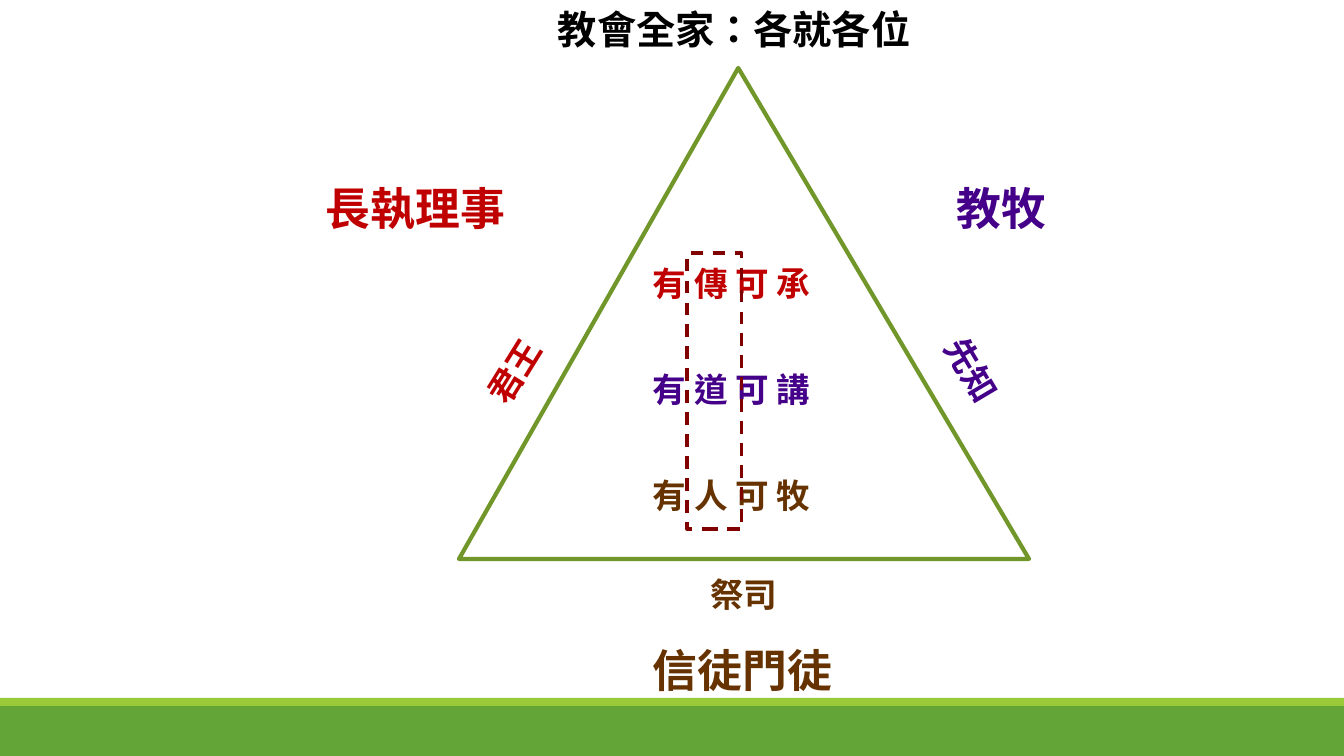
from pptx import Presentation
from pptx.dml.color import RGBColor
from pptx.enum.dml import MSO_LINE
from pptx.enum.lang import MSO_LANGUAGE_ID
from pptx.enum.shapes import MSO_SHAPE
from pptx.enum.text import PP_ALIGN
from pptx.util import Emu, Pt

RECTANGLE = MSO_SHAPE.RECTANGLE
TRIANGLE = MSO_SHAPE.ISOSCELES_TRIANGLE
DASH = MSO_LINE.DASH
LEFT, CENTER = PP_ALIGN.LEFT, PP_ALIGN.CENTER
CHINESE = MSO_LANGUAGE_ID.TRADITIONAL_CHINESE

EMU_PER_PX = 914400 / 100.8
WIDTH, HEIGHT = 1344, 756
BLACK, RED, PURPLE, BROWN = "000000", "C00000", "45008A", "663300"


def px(length):
    return Emu(round(length * EMU_PER_PX))


def color(hex_value):
    return RGBColor.from_string(hex_value)


def add_bar(slide, top, height, fill):
    shape = slide.shapes.add_shape(RECTANGLE, 0, px(top), px(WIDTH), px(height))
    shape.shadow.inherit = False
    shape.fill.solid()
    shape.fill.fore_color.rgb = color(fill)
    shape.line.fill.background()


def add_outline(slide, kind, box, line_color, line_width):
    shape = slide.shapes.add_shape(kind, *map(px, box))
    shape.shadow.inherit = False
    shape.fill.background()
    shape.line.color.rgb = color(line_color)
    shape.line.width = Pt(line_width)
    return shape


def add_label(slide, text, box, size, text_color, align=LEFT, rotation=0):
    shape = slide.shapes.add_textbox(*map(px, box))
    shape.rotation = rotation
    shape.text_frame.word_wrap = True
    paragraph = shape.text_frame.paragraphs[0]
    paragraph.alignment = align
    run = paragraph.add_run()
    run.text = text
    formats = {"name": "Arial", "size": Pt(size), "bold": True, "language_id": CHINESE}
    for name, value in formats.items():
        setattr(run.font, name, value)
    run.font.color.rgb = color(text_color)


def main():
    presentation = Presentation()
    presentation.slide_width, presentation.slide_height = px(WIDTH), px(HEIGHT)
    slide = presentation.slides.add_slide(presentation.slide_layouts[6])

    # Footer bars
    add_bar(slide, 706, 50, "63A537")
    add_bar(slide, 698, 8, "99CB38")

    # Title and triangle
    add_label(slide, "教會全家：各就各位", (548, 0, 777, 57), 28, BLACK)
    triangle = add_outline(slide, TRIANGLE, (459, 68, 570, 491), "719629", 3)
    triangle.adjustments[0] = 0.49

    # Sayings inside the triangle
    sayings = [("有 傳 可 承", RED), ("有 道 可 講", PURPLE), ("有 人 可 牧", BROWN)]
    for row, (saying, text_color) in enumerate(sayings):
        add_label(slide, saying, (643, 258 + 106 * row, 203, 50), 24, text_color)

    # Groups outside the triangle
    groups = [
        ("長執理事", (316, 176, 202, 65), RED),
        ("教牧", (947, 176, 111, 65), PURPLE),
        ("信徒門徒", (643, 638, 202, 65), BROWN),
    ]
    for group, box, text_color in groups:
        add_label(slide, group, box, 32, text_color)

    # Roles along the sides
    add_label(slide, "祭司", (643, 569, 202, 50), 24, BROWN, align=CENTER)
    add_label(slide, "君王", (470, 345, 89, 50), 24, RED, rotation=301.8)
    add_label(slide, "先知", (928, 345, 89, 50), 24, PURPLE, rotation=59.3)

    # Dashed frame around the key words
    frame = add_outline(slide, RECTANGLE, (687, 253, 55, 276), "800000", 2.25)
    frame.line.dash_style = DASH

    presentation.save("out.pptx")


if __name__ == "__main__":
    main()
